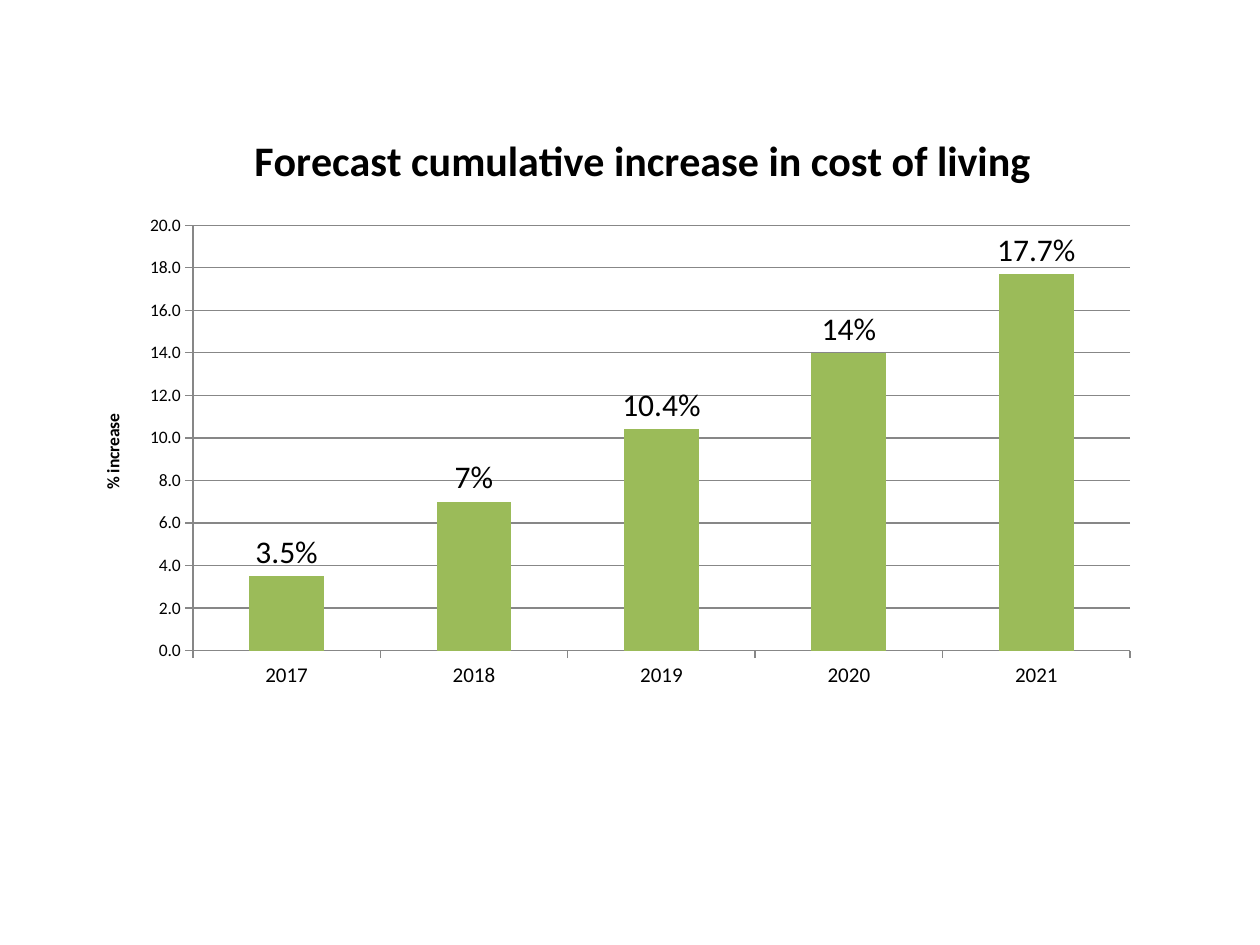
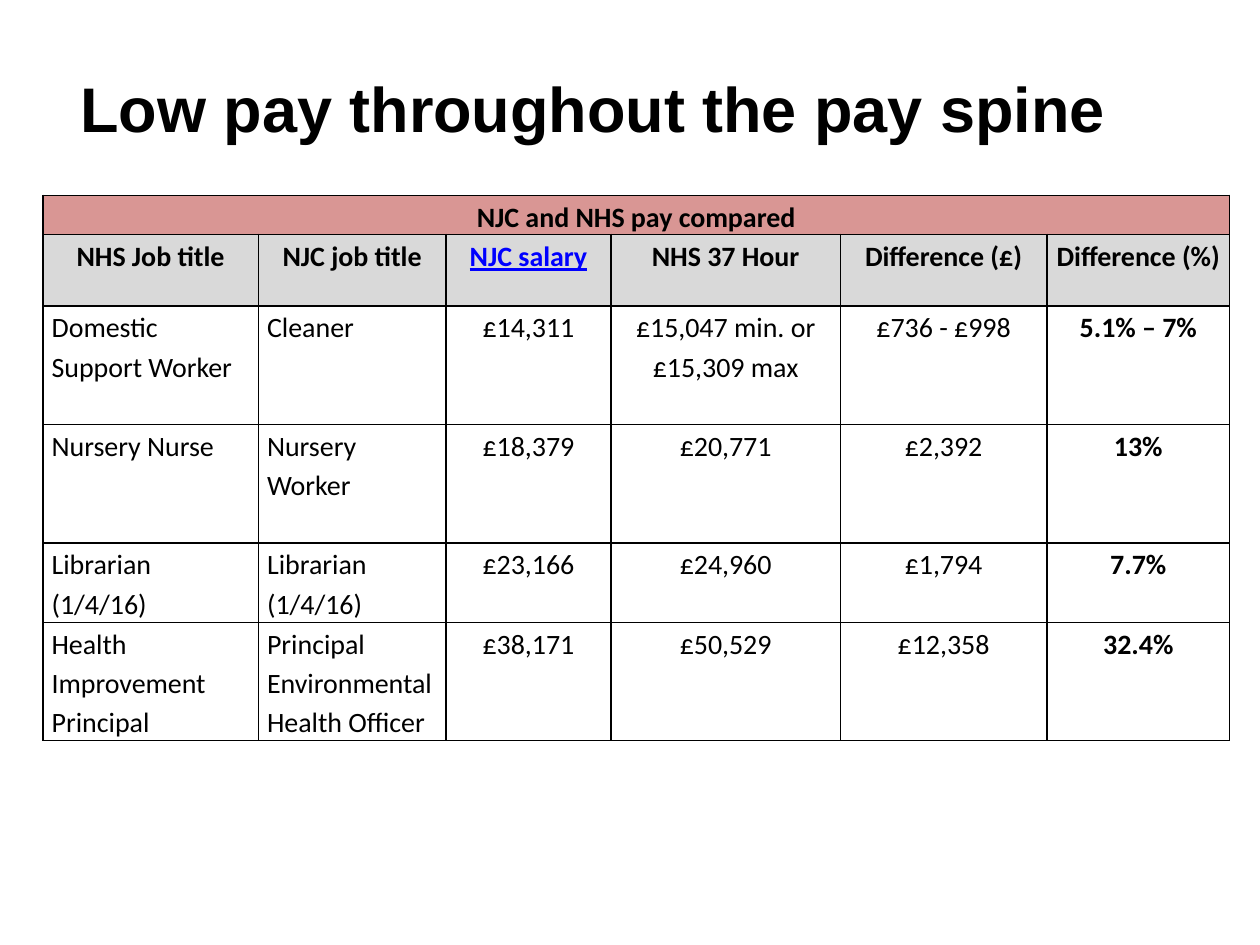
from dataclasses import dataclass

from lxml import etree
from pptx import Presentation
from pptx.chart.data import CategoryChartData
from pptx.dml.color import RGBColor
from pptx.enum.chart import XL_CHART_TYPE, XL_LABEL_POSITION, XL_TICK_MARK
from pptx.enum.text import MSO_ANCHOR, PP_ALIGN
from pptx.oxml import parse_xml
from pptx.oxml.ns import nsdecls, qn
from pptx.util import Inches, Pt

COLUMNS = XL_CHART_TYPE.COLUMN_CLUSTERED
LABEL_ABOVE = XL_LABEL_POSITION.OUTSIDE_END
TICK_OUT = XL_TICK_MARK.OUTSIDE
TOP = MSO_ANCHOR.TOP
LEFT, CENTER = PP_ALIGN.LEFT, PP_ALIGN.CENTER


@dataclass(frozen=True)
class Theme:
    heading_font: str = "Arial"
    body_font: str = "Calibri"
    ink: str = "000000"
    link: str = "0000FF"
    bar: str = "9BBB59"
    grid: str = "878787"
    banner: str = "D99694"
    header: str = "D9D9D9"
    heading_size: int = 36
    chart_title_size: int = 24
    label_size: int = 18
    table_size: int = 16
    category_size: int = 12
    axis_size: int = 10
    grid_width: float = 0.75
    border_width: int = 1
    line_spacing: float = 1.15


def rgb(color):
    return RGBColor.from_string(color)


def place_in_chart(element, index, inner=False, **fractions):
    """Fix a chart part at fractions of the chart area."""
    for old in element.findall(qn("c:layout")):
        element.remove(old)
    layout = parse_xml(f"<c:layout {nsdecls('c')}><c:manualLayout/></c:layout>")
    values = {"layoutTarget": "inner"} if inner else {}
    values.update(xMode="edge", yMode="edge", **fractions)
    for tag, value in values.items():
        etree.SubElement(layout[0], qn(f"c:{tag}")).set("val", str(value))
    element.insert(index, layout)


class Deck:
    def __init__(self, theme):
        self.theme = theme
        self.deck = Presentation()
        self.deck.slide_width, self.deck.slide_height = Inches(10), Inches(7.5)
        self.slide = None

    def new_slide(self):
        self.slide = self.deck.slides.add_slide(self.deck.slide_layouts[6])

    def style(self, font, size, bold=False, color=None, name=None, underline=False):
        formats = {
            "name": name or self.theme.body_font,
            "size": Pt(size),
            "bold": bold,
            "underline": underline,
        }
        for attribute, value in formats.items():
            setattr(font, attribute, value)
        font.color.rgb = rgb(color or self.theme.ink)

    def add_text(self, paragraph, text, size, **formats):
        run = paragraph.add_run()
        run.text = text
        self.style(run.font, size, **formats)

    def heading(self, text, left, top, width, height):
        box = self.slide.shapes.add_textbox(
            Inches(left), Inches(top), Inches(width), Inches(height))
        frame = box.text_frame
        frame.word_wrap = True
        frame.vertical_anchor = TOP
        frame.margin_top = Inches(0.11)
        self.add_text(frame.paragraphs[0], text, self.theme.heading_size,
                      bold=True, name=self.theme.heading_font)

    def column_chart(self, title, axis_title, points, left, top, width, height):
        theme = self.theme
        data = CategoryChartData(number_format="0.0")
        data.categories = [year for year, _, _ in points]
        data.add_series("Series 1", [value for _, value, _ in points])
        chart = self.slide.shapes.add_chart(
            COLUMNS, Inches(left), Inches(top), Inches(width), Inches(height), data).chart
        self.style(chart.font, theme.axis_size)
        chart.has_legend = False

        # Titles and plot position
        chart.has_title = True
        self.add_text(chart.chart_title.text_frame.paragraphs[0], title,
                      theme.chart_title_size, bold=True)
        place_in_chart(chart.chart_title._element, 1, x=0.16, y=0.03)
        place_in_chart(chart._chartSpace.chart.plotArea, 0, inner=True,
                       x=0.11, y=0.2, w=0.87, h=0.72)

        # Axes
        years, increase = chart.category_axis, chart.value_axis
        for axis, size in ((years, theme.category_size), (increase, theme.axis_size)):
            self.style(axis.tick_labels.font, size)
            axis.major_tick_mark = TICK_OUT
            self.rule(axis.format.line)
        scale = {"minimum_scale": 0, "maximum_scale": 20, "major_unit": 2,
                 "has_major_gridlines": True, "has_title": True}
        for attribute, value in scale.items():
            setattr(increase, attribute, value)
        self.rule(increase.major_gridlines.format.line)
        increase.tick_labels.number_format = "0.0"
        increase.tick_labels.number_format_is_linked = False
        self.add_text(increase.axis_title.text_frame.paragraphs[0], axis_title,
                      theme.axis_size, bold=True)

        # Bars and their labels
        plot = chart.plots[0]
        plot.gap_width = 150
        plot.vary_by_categories = False
        bars = plot.series[0]
        bars.format.fill.solid()
        bars.format.fill.fore_color.rgb = rgb(theme.bar)
        for index, (_, _, caption) in enumerate(points):
            label = bars.points[index].data_label
            self.add_text(label.text_frame.paragraphs[0], caption, theme.label_size)
            label.position = LABEL_ABOVE

    def rule(self, line):
        line.color.rgb = rgb(self.theme.grid)
        line.width = Pt(self.theme.grid_width)

    def table(self, rows, left, top, widths, heights):
        table = self.slide.shapes.add_table(
            len(rows), len(widths), Inches(left), Inches(top),
            Inches(sum(widths)), Inches(sum(heights))).table
        table.first_row = table.horz_banding = False
        for column, width in zip(table.columns, widths):
            column.width = Inches(width)
        for row, height in zip(table.rows, heights):
            row.height = Inches(height)
        for r, texts in enumerate(rows):
            for c in range(len(widths)):
                text = texts[c] if c < len(texts) else ""
                self.cell(table.cell(r, c), text, **self.cell_look(r, c, len(widths)))
        table.cell(0, 0).merge(table.cell(0, len(widths) - 1))

    def cell_look(self, row, column, count):
        """Banner row, header row, then left-aligned jobs and a bold last column."""
        theme = self.theme
        if row < 2:
            is_link = (row, column) == (1, 2)
            return {"fill": (theme.banner, theme.header)[row], "align": CENTER,
                    "bold": True, "underline": is_link,
                    "color": theme.link if is_link else theme.ink}
        return {"align": LEFT if column < 2 else CENTER, "bold": column == count - 1}

    def cell(self, cell, text, align, fill=None, **formats):
        theme = self.theme
        cell.margin_left = cell.margin_right = Inches(0.07)
        cell.margin_top = cell.margin_bottom = 0
        if fill:
            cell.fill.solid()
            cell.fill.fore_color.rgb = rgb(fill)
        else:
            cell.fill.background()
        frame = cell.text_frame
        for index, line in enumerate(text.split("\n")):
            paragraph = frame.add_paragraph() if index else frame.paragraphs[0]
            paragraph.alignment = align
            paragraph.line_spacing = theme.line_spacing
            if line:
                self.add_text(paragraph, line, theme.table_size, **formats)
        properties = cell._tc.get_or_add_tcPr()
        for index, side in enumerate("LRTB"):
            properties.insert(index, parse_xml(
                f'<a:ln{side} {nsdecls("a")} w="{Pt(theme.border_width)}"><a:solidFill>'
                f'<a:srgbClr val="{theme.ink}"/></a:solidFill></a:ln{side}>'))


COST_OF_LIVING = [
    ("2017", 3.5, "3.5%"),
    ("2018", 7.0, "7%"),
    ("2019", 10.4, "10.4%"),
    ("2020", 14.0, "14%"),
    ("2021", 17.7, "17.7%"),
]

PAY_COMPARED = [
    ["NJC and NHS pay compared"],
    ["NHS Job title", "NJC job title", "NJC salary", "NHS 37 Hour",
     "Difference (£)", "Difference (%)"],
    ["Domestic Support Worker", "Cleaner", "£14,311",
     "£15,047 min. or £15,309 max", "£736 - £998", "5.1% – 7%"],
    ["Nursery Nurse", "Nursery Worker", "£18,379", "£20,771", "£2,392", "13%"],
    ["Librarian\n(1/4/16)", "Librarian\n(1/4/16)", "£23,166", "£24,960", "£1,794", "7.7%"],
    ["Health Improvement Principal", "Principal Environmental Health Officer",
     "£38,171", "£50,529", "£12,358", "32.4%"],
]


def main():
    deck = Deck(Theme())

    # Slide 1: cost of living forecast
    deck.new_slide()
    deck.column_chart("Forecast cumulative increase in cost of living", "% increase",
                      COST_OF_LIVING, 0.59, 0.85, 8.55, 4.69)

    # Slide 2: pay comparison
    deck.new_slide()
    deck.heading("Low pay throughout the pay spine", 0.54, 0.44, 8.9, 1.25)
    deck.table(PAY_COMPARED, 0.34, 1.55,
               widths=[1.71, 1.49, 1.31, 1.82, 1.64, 1.45],
               heights=[0.31, 0.57, 0.94, 0.94, 0.63, 0.94])

    deck.deck.save("out.pptx")


if __name__ == "__main__":
    main()
